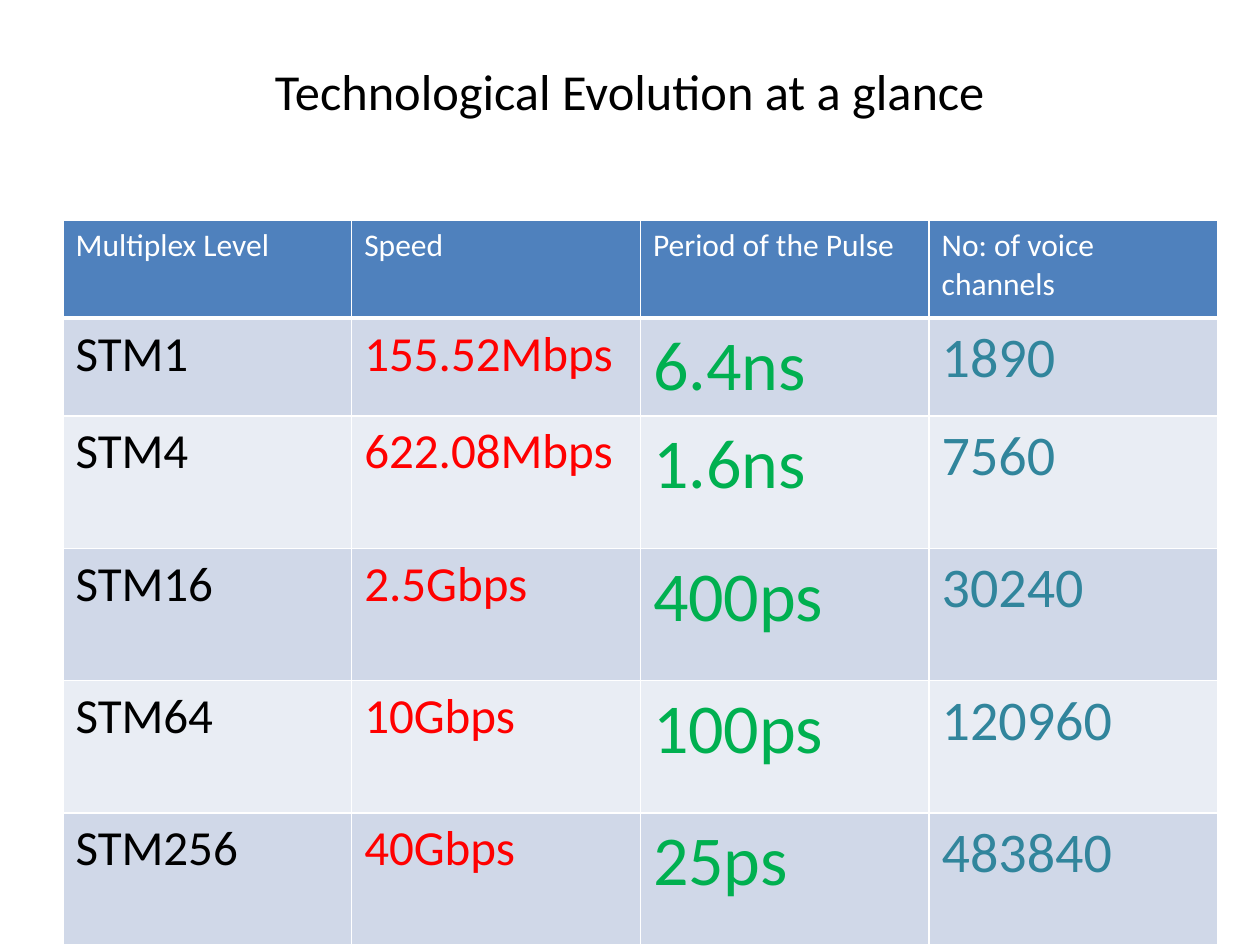
import pptx
import pptx.dml.color
import pptx.enum.text
import pptx.oxml
import pptx.oxml.ns
import pptx.util

Pt = pptx.util.Pt

COLORS = {
    "black": "000000",
    "white": "FFFFFF",
    "header": "4F81BD",
    "band_dark": "D0D8E8",
    "band_light": "E9EDF4",
    "red": "FF0000",
    "green": "00B050",
    "teal": "31859C",
}
HEADERS = ["Multiplex Level", "Speed", "Period of the Pulse", "No: of voice channels"]
LEVELS = [
    ["STM1", "155.52Mbps", "6.4ns", "1890"],
    ["STM4", "622.08Mbps", "1.6ns", "7560"],
    ["STM16", "2.5Gbps", "400ps", "30240"],
    ["STM64", "10Gbps", "100ps", "120960"],
    ["STM256", "40Gbps", "25ps", "483840"],
]
COLUMN_FORMATS = [
    {"size": 28, "color": "black"},
    {"size": 28, "color": "red"},
    {"size": 40, "color": "green"},
    {"size": 32, "color": "teal"},
]
COLUMN_WIDTH = 165
ROW_HEIGHTS = [55.8, 55.8, 75.6, 75.6, 75.6, 75.6]


def rgb(name):
    return pptx.dml.color.RGBColor.from_string(COLORS[name])


def set_text(tf, text, size, color, align=pptx.enum.text.PP_ALIGN.LEFT):
    p = tf.paragraphs[0]
    p.alignment = align
    r = p.add_run()
    r.text = text
    r.font.name = "Calibri"
    r.font.size = Pt(size)
    r.font.bold = False
    r.font.color.rgb = rgb(color)


def set_borders(cell, bottom=1):
    """Draw white borders; they must come before the fill in the cell's XML."""
    tc_pr = cell._tc.get_or_add_tcPr()
    for side, width in (("L", 1), ("R", 1), ("T", 1), ("B", bottom)):
        tc_pr.append(pptx.oxml.parse_xml(
            f'<a:ln{side} {pptx.oxml.ns.nsdecls("a")} w="{Pt(width)}">'
            f'<a:solidFill><a:srgbClr val="{COLORS["white"]}"/></a:solidFill>'
            f'</a:ln{side}>'))


def set_cell(cell, text, fill, bottom=1, **text_format):
    set_borders(cell, bottom)
    cell.fill.solid()
    cell.fill.fore_color.rgb = rgb(fill)
    set_text(cell.text_frame, text, **text_format)


def add_title(s, text):
    sp = s.shapes.title
    sp.left, sp.top, sp.width, sp.height = Pt(36), Pt(21.6), Pt(648), Pt(90)
    tf = sp.text_frame
    tf.vertical_anchor = pptx.enum.text.MSO_ANCHOR.MIDDLE
    tf.margin_bottom = Pt(34)
    set_text(tf, text, size=28.8, color="black", align=pptx.enum.text.PP_ALIGN.CENTER)


def add_level_table(s):
    table = s.shapes.add_table(
        len(LEVELS) + 1, len(HEADERS), Pt(36), Pt(126),
        Pt(COLUMN_WIDTH * len(HEADERS)), Pt(sum(ROW_HEIGHTS))).table
    for column in table.columns:
        column.width = Pt(COLUMN_WIDTH)
    for row, height in zip(table.rows, ROW_HEIGHTS):
        row.height = Pt(height)
    for col, text in enumerate(HEADERS):
        set_cell(table.cell(0, col), text, "header", bottom=3, size=18, color="white")
    for row, values in enumerate(LEVELS, start=1):
        band = "band_dark" if row % 2 else "band_light"
        for col, text in enumerate(values):
            set_cell(table.cell(row, col), text, band, **COLUMN_FORMATS[col])


def main():
    prs = pptx.Presentation()
    prs.slide_width, prs.slide_height = Pt(720), Pt(540)
    s = prs.slides.add_slide(prs.slide_layouts[5])
    add_title(s, "Technological Evolution at a glance")
    add_level_table(s)
    prs.save("out.pptx")


if __name__ == "__main__":
    main()
